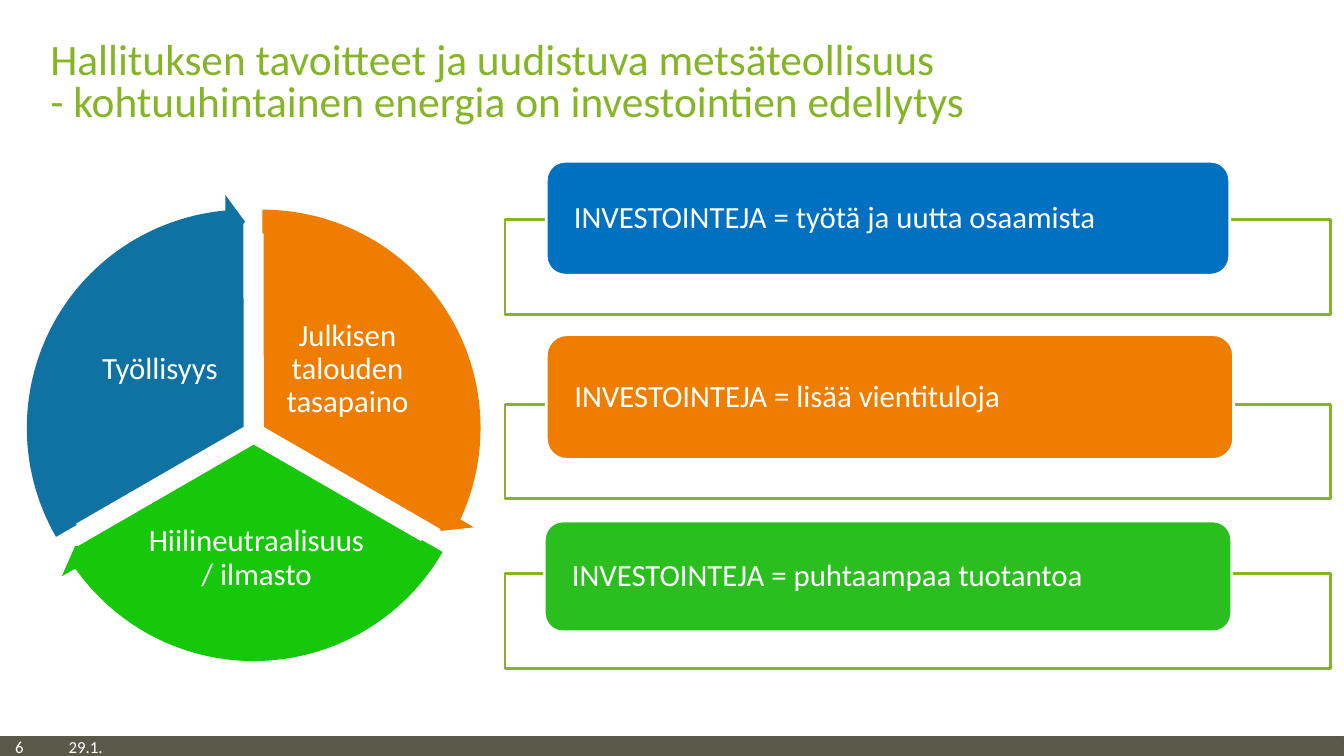
import math

import pptx
import pptx.dml.color
import pptx.enum.shapes
import pptx.enum.text
import pptx.util

Pt = pptx.util.Pt
SHAPES = pptx.enum.shapes.MSO_SHAPE
ALIGN = pptx.enum.text.PP_ALIGN
FONT = "Calibri"
COLORS = {
    "white": "FFFFFF",
    "leaf": "85B526",
    "orange": "EF7D00",
    "green": "17C709",
    "teal": "0F72A2",
    "blue": "0070C0",
    "grass": "2ABF1F",
    "footer": "59594A",
}
ANGLE_UNIT = 0.6  # adjustment value of one degree

# label, colour, start angle, label centre from wheel centre, label size
SECTORS = [
    ("Julkisen talouden tasapaino", "orange", 270, (67, -45.3), (106, 88.6)),
    ("Hiilineutraalisuus / ilmasto", "green", 30, (2, 89.7), (159, 77.8)),
    ("Työllisyys", "teal", 150, (-67, -45.3), (106, 88.6)),
]

# text, colour, frame top, card box; all measured from the region's corner
INVESTMENTS = [
    ("INVESTOINTEJA = työtä ja uutta osaamista", "blue", 41.8, (29.5, 0, 488.2, 81.4)),
    ("INVESTOINTEJA = lisää vientituloja", "orange", 173.5, (29.5, 123.8, 491, 89.3)),
    ("INVESTOINTEJA = puhtaampaa tuotantoa", "grass", 294.5, (28.1, 257, 491, 79.2)),
]


def color(name):
    return pptx.dml.color.RGBColor.from_string(COLORS[name])


def add_shape(page, kind, box, fill, line=None, width=2):
    shape = page.shapes.add_shape(kind, *[Pt(length) for length in box])
    shape.shadow.inherit = False
    shape.fill.solid()
    shape.fill.fore_color.rgb = color(fill)
    if line:
        shape.line.color.rgb = color(line)
        shape.line.width = Pt(width)
    else:
        shape.line.fill.background()
    return shape


def write(shape, text, size, ink="white", align=ALIGN.LEFT, spacing=1.0,
          margins=(0, 0, 0, 0)):
    """Fill a shape with one paragraph; margins are left, top, right, bottom."""
    frame = shape.text_frame
    frame.word_wrap = True
    frame.auto_size = pptx.enum.text.MSO_AUTO_SIZE.NONE
    frame.vertical_anchor = pptx.enum.text.MSO_ANCHOR.MIDDLE
    (frame.margin_left, frame.margin_top,
     frame.margin_right, frame.margin_bottom) = [Pt(length) for length in margins]
    para = frame.paragraphs[0]
    para.text = text
    para.alignment = align
    para.line_spacing = spacing
    para.font.name = FONT
    para.font.size = Pt(size)
    para.font.color.rgb = color(ink)


def add_text(page, box, text, size, **style):
    write(page.shapes.add_textbox(*[Pt(length) for length in box]), text, size, **style)


def place_title(page, box, text):
    title = page.shapes.title
    title.left, title.top, title.width, title.height = [Pt(length) for length in box]
    write(title, text, 31, ink="leaf", spacing=0.8, margins=(7.2, 3.6, 7.2, 3.6))


def square(center, side):
    return center[0] - side / 2, center[1] - side / 2, side, side


def draw_wheel(page, box):
    """Three sectors pushed out from the middle, each with an arrow on its rim."""
    left, top, width, height = box
    middle = left + width / 2, top + height / 2
    pie_side, arrow_side, push, sweep, head = 297.4, 334, 7.2, 120, 3.275
    centers = []
    for label, fill, start, offset, size in SECTORS:
        direction = math.radians(start + sweep / 2)
        center = (middle[0] + push * math.cos(direction),
                  middle[1] + push * math.sin(direction))
        centers.append(center)
        pie = add_shape(page, SHAPES.PIE, square(center, pie_side), fill, "white")
        pie.adjustments[0] = start * ANGLE_UNIT
        pie.adjustments[1] = (start + sweep) % 360 * ANGLE_UNIT
        label_box = (middle[0] + offset[0] - size[0] / 2,
                     middle[1] + offset[1] - size[1] / 2, *size)
        add_text(page, label_box, label, 22, align=ALIGN.CENTER, spacing=0.9,
                 margins=(2.2, 2.2, 2.2, 2.2))

    for center, (label, fill, start, offset, size) in zip(centers, SECTORS):
        arrow = add_shape(page, SHAPES.CIRCULAR_ARROW, square(center, arrow_side), fill)
        end = (start + sweep) % 360 * ANGLE_UNIT
        values = (0.051, head, end - head, start * ANGLE_UNIT, 0.059)
        for index, value in enumerate(values):
            arrow.adjustments[index] = value


def draw_investments(page, box):
    left, top, width, height = box
    for text, fill, frame_top, (x, y, card_width, card_height) in INVESTMENTS:
        add_shape(page, SHAPES.RECTANGLE, (left, top + frame_top, width, 67.7),
                  "white", "leaf")
        card = add_shape(page, SHAPES.ROUNDED_RECTANGLE,
                         (left + x, top + y, card_width, card_height), fill, "white")
        write(card, text, 22, spacing=0.9, margins=(15.8, 0, 15.8, 0))


def draw_footer(page, box):
    left, top, width, height = box
    add_shape(page, SHAPES.RECTANGLE, box, "footer", "footer", 0.75)
    for x, text_width, text in [(10.8, 38.2, "6"), (49, 224, "29.1.")]:
        add_text(page, (left + x, top + 1.4, text_width, 13.7), text, 12,
                 margins=(0, 0, 0, 2.9))


def main():
    deck = pptx.Presentation()
    deck.slide_width, deck.slide_height = Pt(960), Pt(540)
    page = deck.slides.add_slide(deck.slide_layouts.get_by_name("Title Only"))
    draw_footer(page, (0, 526.4, 960, 14))
    place_title(page, (28.8, 10, 672.5, 100),
                "Hallituksen tavoitteet ja uudistuva metsäteollisuus\v"
                "- kohtuuhintainen energia on investointien edellytys")
    draw_wheel(page, (8, 136, 346.4, 346.4))
    draw_investments(page, (360.7, 115.2, 589.7, 362))
    deck.save("out.pptx")


if __name__ == "__main__":
    main()
